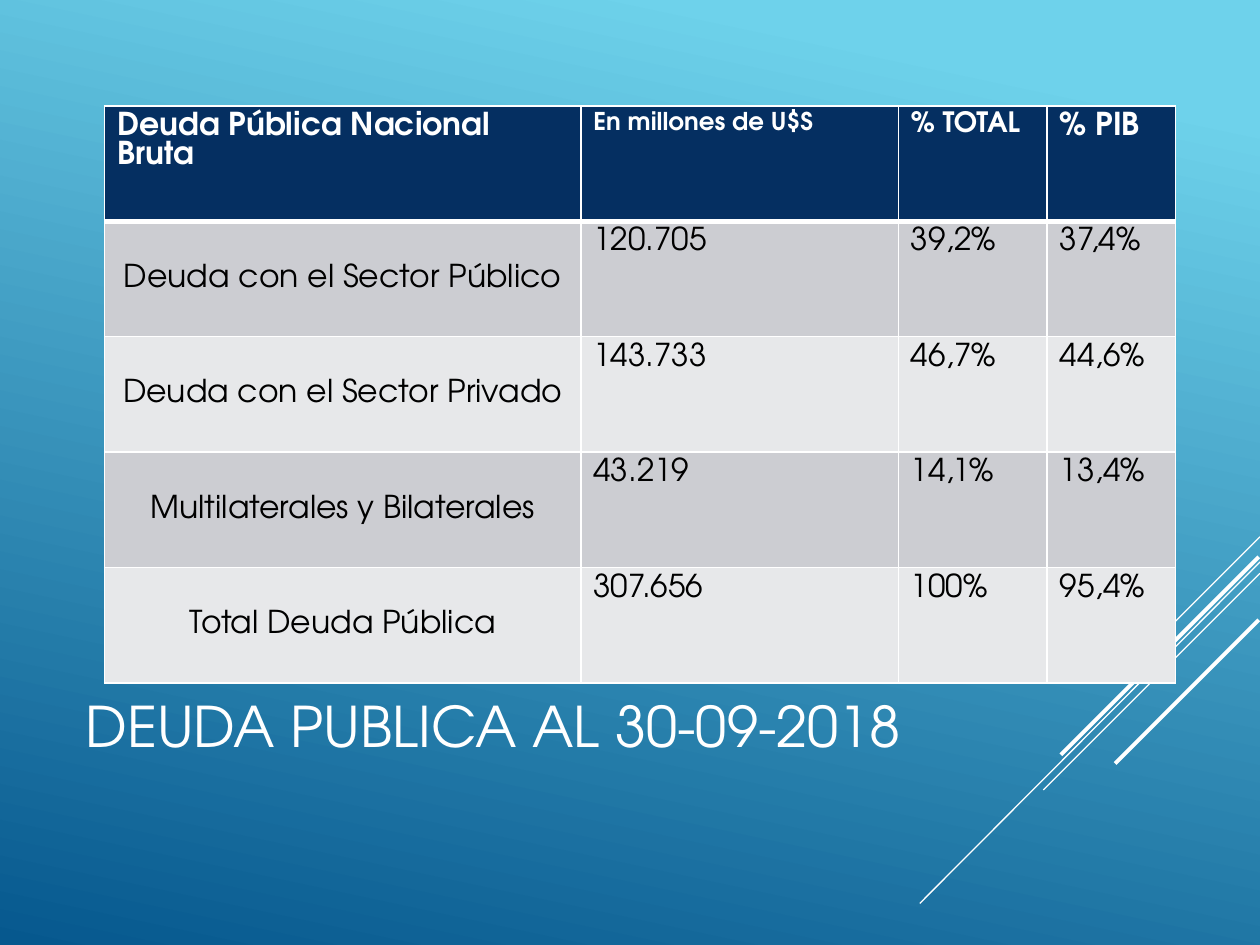
from lxml.etree import SubElement
from pptx import Presentation
from pptx.dml.color import RGBColor as RGB
from pptx.enum.shapes import MSO_CONNECTOR as CONNECTOR
from pptx.enum.text import MSO_ANCHOR as ANCHOR, PP_ALIGN as ALIGN
from pptx.oxml.ns import qn
from pptx.util import Inches, Pt

COLORS = {
    "sky": "6ED2EB",
    "deep": "06588E",
    "navy": "052F61",
    "dark_band": "CCCDD2",
    "light_band": "E7E8EA",
    "white": "FFFFFF",
    "black": "000000",
}
FONT = "TeX Gyre Adventor"


def add_text(para, text, size, color, bold=False):
    span = para.add_run()
    span.text = text
    span.font.name = FONT
    span.font.size = Pt(size)
    span.font.bold = bold
    span.font.color.rgb = RGB.from_string(COLORS[color])


def add_border(cell, side, width):
    border = SubElement(cell._tc.get_or_add_tcPr(), qn(f"a:ln{side}"), w=str(Pt(width)))
    fill = SubElement(border, qn("a:solidFill"))
    SubElement(fill, qn("a:srgbClr"), val=COLORS["white"])


deck = Presentation()
deck.slide_width, deck.slide_height = Inches(10), Inches(7.5)
page = deck.slides.add_slide(deck.slide_layouts[6])

backdrop = page.background.fill
backdrop.gradient()
backdrop.gradient_angle = 258
for stop, position, color in zip(backdrop.gradient_stops, (0.1, 1), ("sky", "deep")):
    stop.position = position
    stop.color.rgb = RGB.from_string(COLORS[color])

stripes = [
    (10, 4.26, 9.17, 5.09, 0.75),
    (10, 4.46, 7.3, 7.17, 0.75),
    (10, 4.55, 8.28, 6.27, 0.75),
    (9.99, 4.42, 8.42, 5.99, 2.25),
    (9.99, 4.92, 8.85, 6.06, 2.25),
]
for *ends, width in stripes:
    stripe = page.shapes.add_connector(CONNECTOR.STRAIGHT, *map(Inches, ends))
    stripe.line.color.rgb = RGB.from_string(COLORS["white"])
    stripe.line.width = Pt(width)
    SubElement(stripe._element.spPr, qn("a:effectLst"))

title = page.shapes.add_textbox(Inches(0.58), Inches(4.92), Inches(7.17), Inches(1.67))
title.text_frame.word_wrap = True
title.text_frame.vertical_anchor = ANCHOR.MIDDLE
add_text(title.text_frame.paragraphs[0], "DEUDA PUBLICA AL 30-09-2018", 32, "white")

rows = [
    ("Deuda Pública Nacional Bruta", "En millones de U$S", "% TOTAL", "% PIB"),
    ("Deuda con el Sector Público", "120.705", "39,2%", "37,4%"),
    ("Deuda con el Sector Privado", "143.733", "46,7%", "44,6%"),
    ("Multilaterales y Bilaterales", "43.219", "14,1%", "13,4%"),
    ("Total Deuda Pública", "307.656", "100%", "95,4%"),
]
column_widths = (3.78, 2.52, 1.18, 1.02)
header_sizes = (18, 14, 16, 18)

table = page.shapes.add_table(
    len(rows), len(column_widths), Inches(0.83), Inches(0.84), Inches(8.5), Inches(4.58)
).table
for column, width in zip(table.columns, column_widths):
    column.width = Inches(width)

for row_index, row in enumerate(rows):
    header = row_index == 0
    band = "navy" if header else "dark_band" if row_index % 2 else "light_band"
    for column_index, text in enumerate(row):
        cell = table.cell(row_index, column_index)
        para = cell.text_frame.paragraphs[0]
        if header:
            add_text(para, text, header_sizes[column_index], "white", True)
        else:
            add_text(para, text, 18, "black")
            if column_index == 0:
                cell.vertical_anchor = ANCHOR.MIDDLE
                para.alignment = ALIGN.CENTER
        for side in "LRTB":
            thick = (header and side == "B") or (row_index == 1 and side == "T")
            add_border(cell, side, 3 if thick else 1)
        cell.fill.solid()
        cell.fill.fore_color.rgb = RGB.from_string(COLORS[band])

deck.save("out.pptx")
